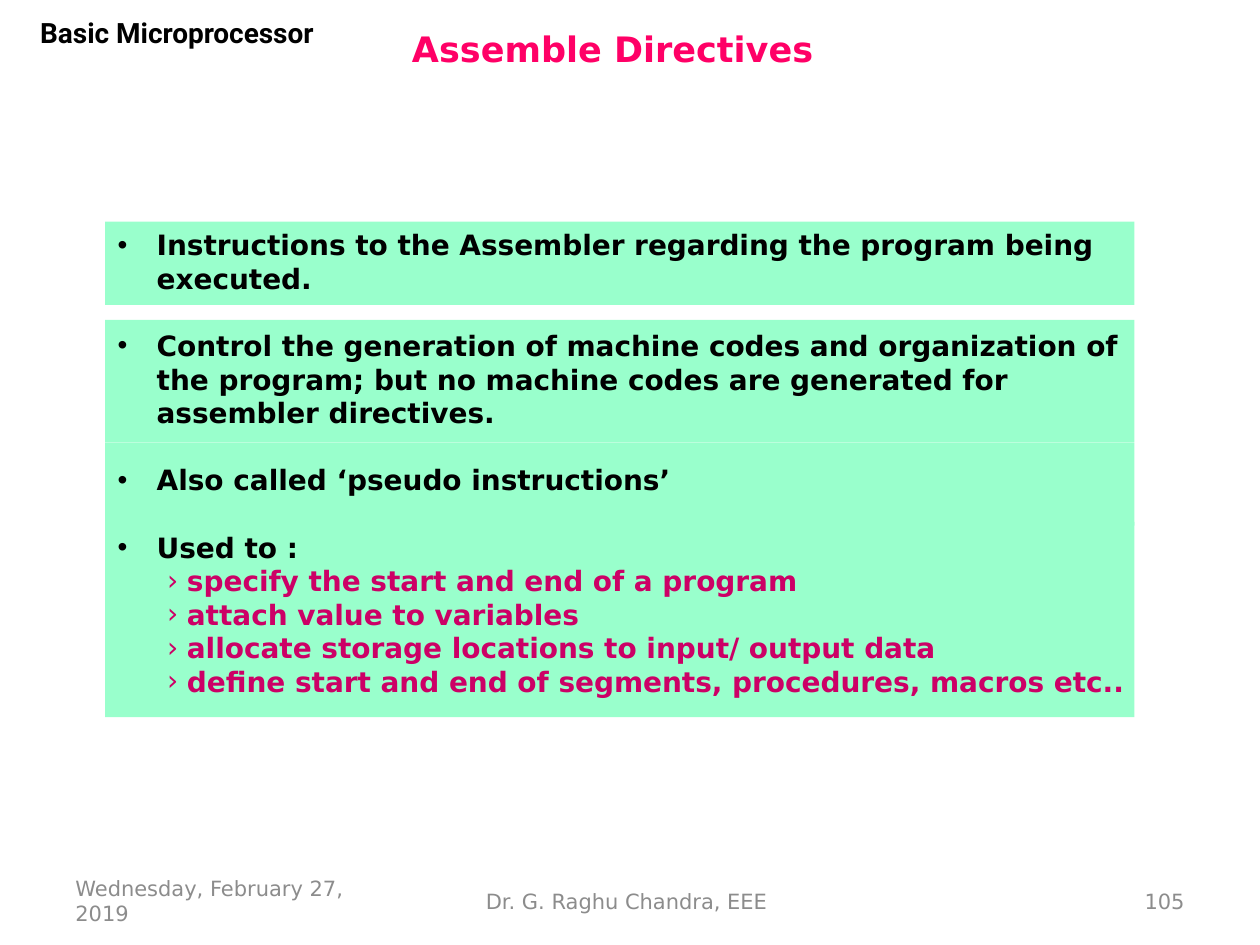
from lxml import etree
from pptx import Presentation
from pptx.dml.color import RGBColor
from pptx.enum import shapes, text
from pptx.oxml.ns import qn
from pptx.util import Cm, Pt

COLORS = {"mint": "99FFCC", "pink": "FF0066", "crimson": "CC0066",
          "black": "000000", "gray": "8C8C8C"}
BODY_FONT = "DejaVu Sans"
ALIGN = text.PP_ALIGN


def style(p, size, color, bold=False, font=BODY_FONT, align=ALIGN.LEFT):
    p.alignment = align
    for r in p.runs:
        r.font.size = Pt(size)
        r.font.name = font
        r.font.bold = bold
        r.font.color.rgb = RGBColor.from_string(COLORS[color])


def add_bullet(p, char, font, left, hang):
    """Give the paragraph a bullet and a hanging indent, in cm."""
    pPr = p._p.get_or_add_pPr()
    pPr.set("marL", str(Cm(left)))
    pPr.set("indent", str(-Cm(hang)))
    etree.SubElement(pPr, qn("a:buFont"), typeface=font)
    etree.SubElement(pPr, qn("a:buChar"), char=char)


prs = Presentation()
prs.slide_width, prs.slide_height = Cm(25.4), Cm(19.05)
s = prs.slides.add_slide(prs.slide_layouts[5])

# Green bands behind the points
for top, height in [(10.52, 3.94), (8.92, 1.68), (6.45, 2.46), (4.47, 1.68)]:
    band = s.shapes.add_shape(shapes.MSO_SHAPE.RECTANGLE,
                              Cm(2.12), Cm(top), Cm(20.75), Cm(height))
    band.shadow.inherit = False
    band.fill.solid()
    band.fill.fore_color.rgb = RGBColor.from_string(COLORS["mint"])
    band.line.fill.background()

# Title and course name
title = s.shapes.title
title.left, title.top, title.width, title.height = Cm(8.05), Cm(0.3), Cm(16.7), Cm(1.35)
title.text_frame.text = "Assemble Directives"
title.text_frame.vertical_anchor = text.MSO_ANCHOR.MIDDLE
style(title.text_frame.paragraphs[0], 20, "pink", bold=True)

course = s.shapes.add_textbox(Cm(0.18), Cm(0.18), Cm(6.78), Cm(1.63))
course.text_frame.word_wrap = True
course.text_frame.text = "Basic Microprocessor"
style(course.text_frame.paragraphs[0], 16, "black", True, "Roboto", ALIGN.CENTER)

# Points and the uses listed under the last one
points = [
    "Instructions to the Assembler regarding the program being executed.",
    "Control the generation of machine codes and organization of the program; "
    "but no machine codes are generated for assembler directives.",
    "Also called ‘pseudo instructions’",
    "Used to :",
]
uses = [
    "specify the start and end of a program",
    "attach value to variables",
    "allocate storage locations to input/ output data",
    "define start and end of segments, procedures, macros etc..",
]
body = s.shapes.add_textbox(Cm(2.12), Cm(4.47), Cm(21.8), Cm(11.2))
tf = body.text_frame
tf.word_wrap = True
tf.text = "\n".join(points + uses)
for i, p in enumerate(tf.paragraphs):
    p.line_spacing = Pt(19.2)
    if i < len(points):
        p.space_before = Pt(19.2 if i else 0)
        style(p, 16, "black", bold=True)
        add_bullet(p, "•", "Arial", 0.79, 0.79)
    else:
        style(p, 16, "crimson", bold=True)
        add_bullet(p, "›", BODY_FONT, 1.4, 0.4)

# Footer
for left, width, words, align in [
    (1.27, 5.93, "Wednesday, February 27, 2019", ALIGN.LEFT),
    (8.68, 8.04, "Dr. G. Raghu Chandra, EEE ", ALIGN.CENTER),
    (18.2, 5.93, "105", ALIGN.RIGHT),
]:
    tf = s.shapes.add_textbox(Cm(left), Cm(17.65), Cm(width), Cm(1.02)).text_frame
    tf.word_wrap = True
    tf.vertical_anchor = text.MSO_ANCHOR.MIDDLE
    tf.text = words
    style(tf.paragraphs[0], 12, "gray", align=align)

prs.save("out.pptx")
